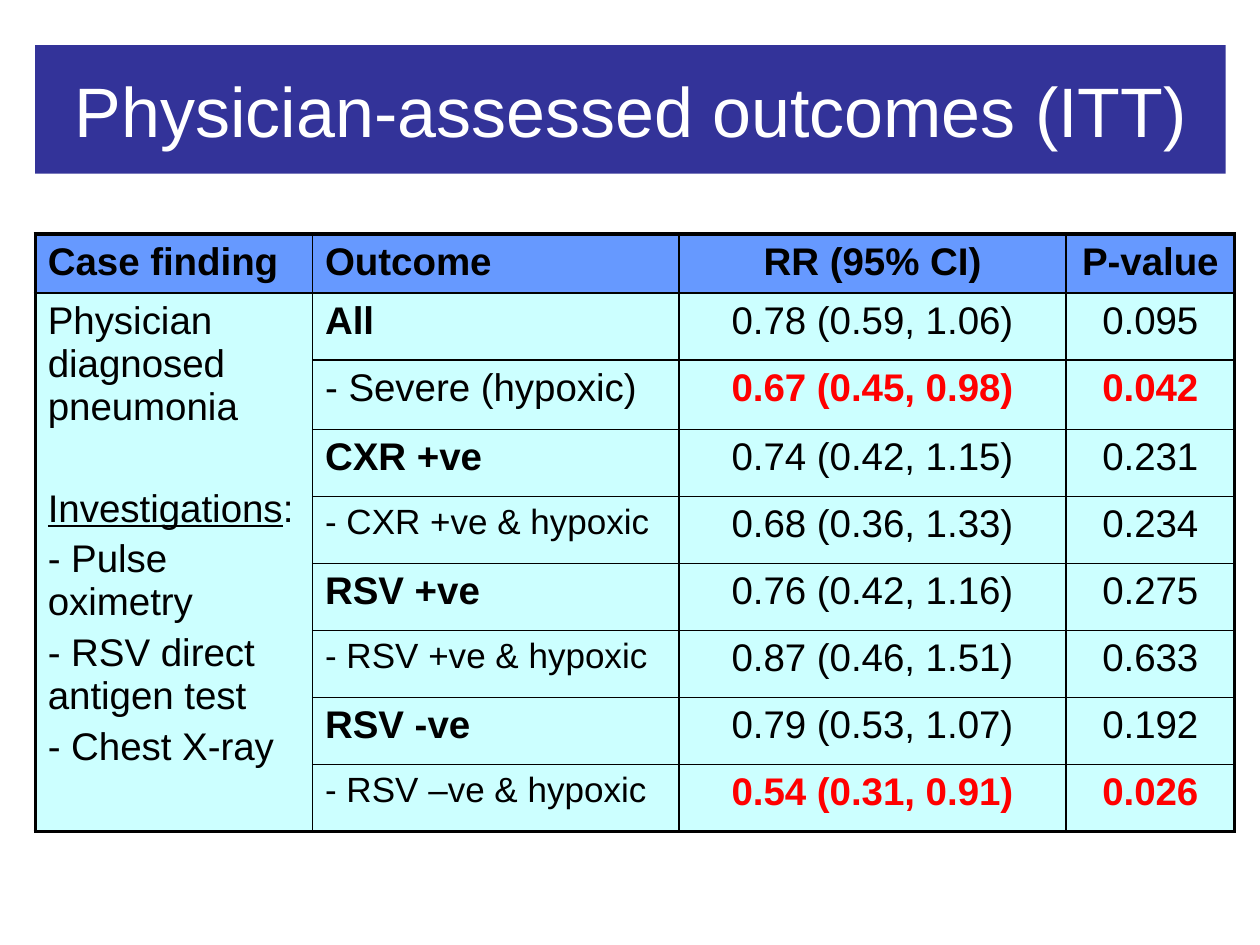
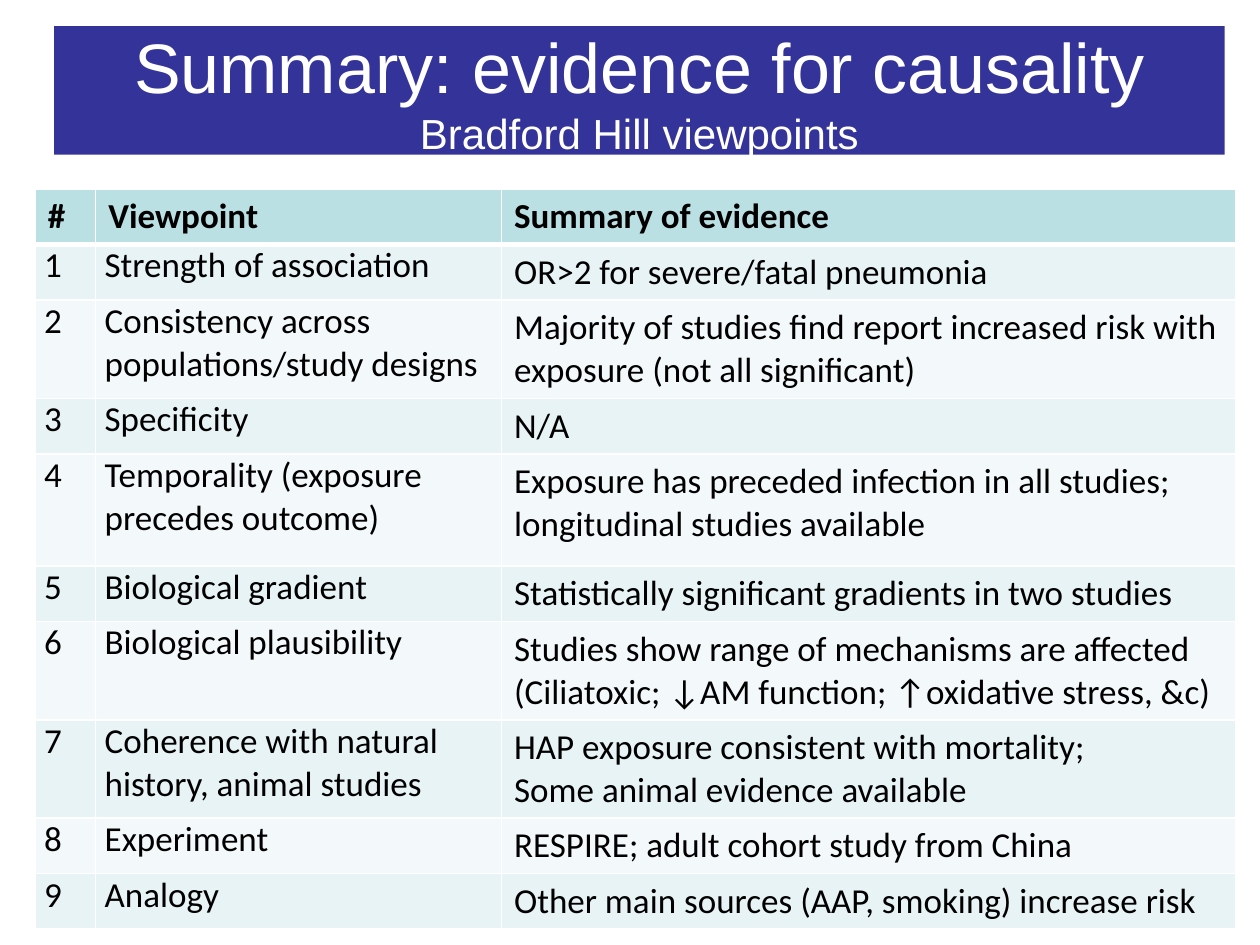
from lxml import etree
from pptx import Presentation
from pptx.dml.color import RGBColor
from pptx.enum.shapes import MSO_SHAPE
from pptx.enum.text import MSO_ANCHOR, PP_ALIGN
from pptx.oxml.ns import qn
from pptx.util import Cm, Pt

HUES = {
    "band": "333399", "white": "FFFFFF", "black": "000000", "red": "FF0000",
    "blue": "6699FF", "cyan": "CCFFFF",
    "teal": "BBE0E3", "mint": "E7F3F4", "pale": "F3F9FA",
}


class Deck:
    def __init__(self):
        self.prs = Presentation()
        self.prs.slide_width, self.prs.slide_height = Cm(25.4), Cm(19.05)
        self.slide = None

    def page(self):
        self.slide = self.prs.slides.add_slide(self.prs.slide_layouts[6])

    def run(self, para, text, size, hue="black", font="Arial", bold=False, under=False):
        run = para.add_run()
        run.text = text
        run.font.name, run.font.size = font, Pt(size)
        run.font.bold, run.font.underline = bold, under
        run.font.color.rgb = RGBColor.from_string(HUES[hue])

    def title(self, left, top, width, main, sub=None):
        box = self.slide.shapes.add_shape(
            MSO_SHAPE.RECTANGLE, Cm(left), Cm(top), Cm(width), Cm(2.59))
        box.shadow.inherit = False
        box.fill.solid()
        box.fill.fore_color.rgb = RGBColor.from_string(HUES["band"])
        box.line.fill.background()
        frame = box.text_frame
        frame.word_wrap = True
        frame.vertical_anchor = MSO_ANCHOR.MIDDLE
        para = frame.paragraphs[0]
        para.alignment = PP_ALIGN.CENTER
        self.run(para, main, 40, "white")
        if sub:
            para.add_line_break()
            self.run(para, sub, 24, "white")

    def table(self, top, cols, rows):
        frame = self.slide.shapes.add_table(
            len(rows), len(cols), Cm(0.71), Cm(top), Cm(sum(cols)), Cm(sum(rows)))
        for col, width in zip(frame.table.columns, cols):
            col.width = Cm(width)
        for row, height in zip(frame.table.rows, rows):
            row.height = Cm(height)
        return frame

    def paint(self, cell, fill, edge, sides):
        """Draw borders (left, right, top, bottom widths), then the fill."""
        props = cell._tc.get_or_add_tcPr()
        for side, width in zip("LRTB", sides):
            line = etree.SubElement(props, qn(f"a:ln{side}"), w=str(Pt(width)))
            solid = etree.SubElement(line, qn("a:solidFill"))
            etree.SubElement(solid, qn("a:srgbClr"), val=HUES[edge])
        cell.fill.solid()
        cell.fill.fore_color.rgb = RGBColor.from_string(HUES[fill])

    def grid(self, table, fills, edge, across, down):
        """Paint all cells; across and down list the rule widths."""
        for r, fill in enumerate(fills):
            for c in range(len(table.columns)):
                cell = table.cell(r, c)
                end = r + cell.span_height
                self.paint(cell, fill, edge, (down[c], down[c + 1], across[r], across[end]))

    def label(self, cell, text, size, align=PP_ALIGN.LEFT, **style):
        para = cell.text_frame.paragraphs[0]
        para.alignment = align
        self.run(para, text, size, **style)


# Wording of the outcomes table
HEADS = ["Case finding", "Outcome", "RR (95% CI)", "P-value"]
TRIAL = [
    ("All", "0.78 (0.59, 1.06)", "0.095"),
    ("- Severe (hypoxic)", "0.67 (0.45, 0.98)", "0.042"),
    ("CXR +ve", "0.74 (0.42, 1.15)", "0.231"),
    ("- CXR +ve & hypoxic", "0.68 (0.36, 1.33)", "0.234"),
    ("RSV +ve", "0.76 (0.42, 1.16)", "0.275"),
    ("- RSV +ve & hypoxic", "0.87 (0.46, 1.51)", "0.633"),
    ("RSV -ve", "0.79 (0.53, 1.07)", "0.192"),
    ("- RSV –ve & hypoxic", "0.54 (0.31, 0.91)", "0.026"),
]
TESTS = ["- Pulse oximetry", "- RSV direct antigen test", "- Chest X-ray"]

# Wording of the causality table
VIEWS = [
    ("Strength of association", "OR>2 for severe/fatal pneumonia"),
    ("Consistency across populations/study designs",
     "Majority of studies find report increased risk with exposure (not all significant)"),
    ("Specificity", "N/A"),
    ("Temporality (exposure precedes outcome)",
     "Exposure has preceded infection in all studies; longitudinal studies available"),
    ("Biological gradient", "Statistically significant gradients in two studies"),
    ("Biological plausibility",
     "Studies show range of mechanisms are affected "
     "(Ciliatoxic; ↓AM function; ↑oxidative stress, &c)"),
    ("Coherence with natural history, animal studies",
     "HAP exposure consistent with mortality;\nSome animal evidence available"),
    ("Experiment", "RESPIRE; adult cohort study from China"),
    ("Analogy", "Other main sources (AAP, smoking) increase risk"),
]


def outcomes(deck):
    deck.page()
    deck.title(0.71, 0.91, 24, "Physician-assessed outcomes (ITT)")
    table = deck.table(4.72, [5.59, 7.39, 7.8, 3.4],
                       [1.19, 1.35, 1.4] + [1.35] * 6).table
    table.cell(1, 0).merge(table.cell(8, 0))
    deck.grid(table, ["blue"] + ["cyan"] * 8, "black",
              [2.25] + [1] * 8 + [2.25], [2.25, 1, 1, 1, 2.25])
    aligns = [PP_ALIGN.LEFT] * 2 + [PP_ALIGN.CENTER] * 2
    for c, head in enumerate(HEADS):
        deck.label(table.cell(0, c), head, 22, aligns[c], bold=True)

    # Results, with significant ones in red
    for r, (name, ratio, prob) in enumerate(TRIAL, 1):
        size = 20 if name.endswith("& hypoxic") else 22
        deck.label(table.cell(r, 1), name, size, bold=not name.startswith("-"))
        strong = float(prob) < 0.05
        for c, text in enumerate((ratio, prob), 2):
            deck.label(table.cell(r, c), text, 22, aligns[c],
                       hue="red" if strong else "black", bold=strong)

    # Case finding and its tests
    cell = table.cell(1, 0)
    deck.label(cell, "Physician diagnosed pneumonia", 22)
    para = cell.text_frame.add_paragraph()
    para.space_before = Pt(33.5)
    deck.run(para, "Investigations", 22, under=True)
    deck.run(para, ":", 22)
    for test in TESTS:
        para = cell.text_frame.add_paragraph()
        para.space_before = Pt(4.4)
        deck.run(para, test, 22)


def causes(deck):
    deck.page()
    deck.title(1.09, 0.53, 23.6, "Summary: evidence for causality",
               "Bradford Hill viewpoints")
    frame = deck.table(3.81, [1.22, 8.18, 14.81], [1.04] * 4 + [2.26] + [1.04] * 5)
    frame.height = Cm(14.71)
    table = frame.table
    deck.grid(table, ["teal"] + ["mint", "pale"] * 4 + ["mint"], "white",
              [1, 3] + [1] * 9, [1] * 4)
    for c, head in enumerate(["#", "Viewpoint", "Summary of evidence"]):
        deck.label(table.cell(0, c), head, 20, font="Calibri", bold=True)

    # Numbered viewpoints
    for r, (view, proof) in enumerate(VIEWS, 1):
        for c, text in enumerate((str(r), view)):
            cell = table.cell(r, c)
            cell.margin_left = cell.margin_right = Cm(0.18)
            cell.margin_top = cell.margin_bottom = 0
            deck.label(cell, text, 20, font="Calibri")
        cell = table.cell(r, 2)
        first, *rest = proof.split("\n")
        deck.label(cell, first, 20, font="Calibri")
        for text in rest:
            deck.run(cell.text_frame.add_paragraph(), text, 20, font="Calibri")


def main():
    deck = Deck()
    outcomes(deck)
    causes(deck)
    deck.prs.save("out.pptx")


if __name__ == "__main__":
    main()
